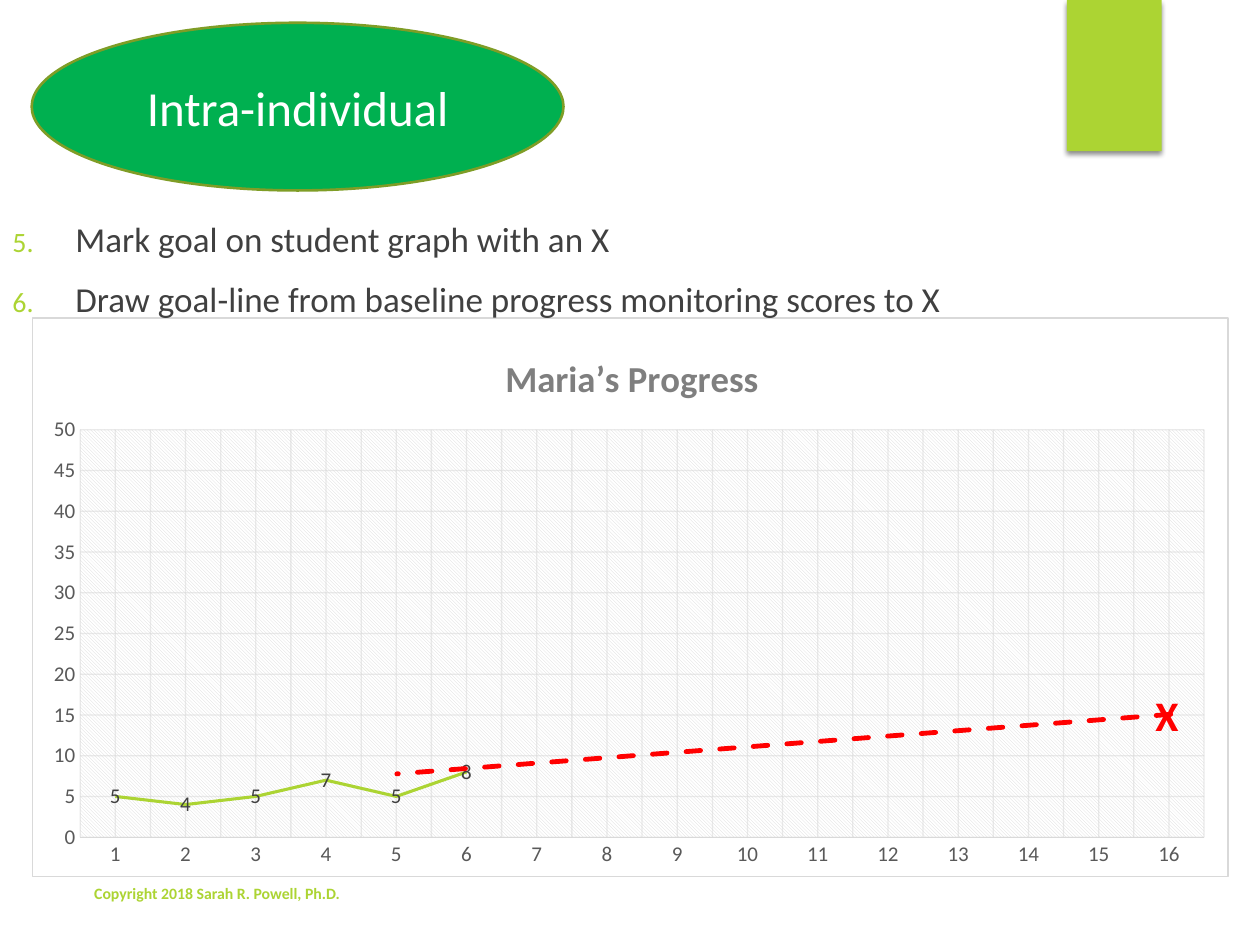
from copy import deepcopy
from dataclasses import dataclass

from lxml import etree
from pptx import Presentation
from pptx.chart.data import CategoryChartData
from pptx.dml.color import RGBColor
from pptx.enum.chart import XL_CHART_TYPE, XL_LABEL_POSITION, XL_MARKER_STYLE, XL_TICK_MARK
from pptx.enum.dml import MSO_LINE
from pptx.enum.shapes import MSO_CONNECTOR, MSO_SHAPE
from pptx.enum.text import MSO_ANCHOR, PP_ALIGN
from pptx.oxml import parse_xml
from pptx.oxml.ns import nsdecls, qn
from pptx.util import Cm, Pt

LINE_CHART = XL_CHART_TYPE.LINE
NO_MARKER = XL_MARKER_STYLE.NONE
NO_TICK = XL_TICK_MARK.NONE
LABEL_CENTER = XL_LABEL_POSITION.CENTER
STRAIGHT = MSO_CONNECTOR.STRAIGHT
RECTANGLE, OVAL = MSO_SHAPE.RECTANGLE, MSO_SHAPE.OVAL
TOP, MIDDLE, BOTTOM = MSO_ANCHOR.TOP, MSO_ANCHOR.MIDDLE, MSO_ANCHOR.BOTTOM
LEFT, CENTER = PP_ALIGN.LEFT, PP_ALIGN.CENTER
DASH = MSO_LINE.DASH

FONT = "Calibri"
COLORS = {
    "lime": "ACD433", "green": "00B050", "olive": "7F9D26", "white": "FFFFFF",
    "black": "000000", "text": "404040", "axis": "595959", "grid": "D9D9D9",
    "heading": "7F7F7F", "goal": "FF0000",
}


@dataclass(frozen=True)
class Area:
    left: float
    top: float
    width: float
    height: float

    def lengths(self) -> tuple:
        return Cm(self.left), Cm(self.top), Cm(self.width), Cm(self.height)


ACCENT = Area(21.51, 0, 1.91, 3.05)
TITLE = Area(0.64, 0.46, 10.72, 3.38)
CHART = Area(0.64, 6.4, 24.13, 11.28)
GOAL_MARK = Area(23.04, 13.77, 1.93, 1.27)
STEPS = Area(0, 4.27, 24.13, 11.35)
COPYRIGHT = Area(1.65, 17.68, 10.72, 0.64)

STEP_START = 5
STEP_TEXTS = [
    "Mark goal on student graph with an X",
    "Draw goal-line from baseline progress monitoring scores to X",
]
SCORES = [5, 4, 5, 7, 5, 8]
WEEKS = 16


def rgb(name: str) -> RGBColor:
    return RGBColor.from_string(COLORS[name])


def format_font(font, size: float, color: str, bold: bool = False) -> None:
    font.name, font.size, font.bold = FONT, Pt(size), bold
    font.color.rgb = rgb(color)


def write_text(para, text: str, *, size: float, color: str, bold: bool = False,
               align=LEFT) -> None:
    para.alignment = align
    span = para.add_run()
    span.text = text
    format_font(span.font, size, color, bold)


def add_text_box(page, area: Area, anchor=TOP):
    frame = page.shapes.add_textbox(*area.lengths()).text_frame
    frame.word_wrap = True
    frame.vertical_anchor = anchor
    return frame


def add_filled_shape(page, kind, area: Area, fill: str):
    shape = page.shapes.add_shape(kind, *area.lengths())
    shape.shadow.inherit = False
    shape.fill.solid()
    shape.fill.fore_color.rgb = rgb(fill)
    shape.line.fill.background()
    return shape


def add_accent(page) -> None:
    shape = add_filled_shape(page, RECTANGLE, ACCENT, "lime")
    shape._element.spPr.find(qn("a:effectLst")).append(parse_xml(
        f'<a:outerShdw {nsdecls("a")} blurRad="{Pt(3)}" dist="{Pt(2)}" dir="5400000" '
        f'rotWithShape="0"><a:srgbClr val="{COLORS["black"]}"><a:alpha val="45000"/>'
        '</a:srgbClr></a:outerShdw>'))


def add_title(page) -> None:
    oval = add_filled_shape(page, OVAL, TITLE, "green")
    oval.line.color.rgb = rgb("olive")
    oval.line.width = Pt(1.5)
    title = page.shapes.title
    title.left, title.top, title.width, title.height = TITLE.lengths()
    title.text_frame.vertical_anchor = MIDDLE
    write_text(title.text_frame.paragraphs[0], "Intra-individual",
               size=28, color="white", align=CENTER)
    oval._element.addnext(title._element)


def add_steps(page) -> None:
    frame = add_text_box(page, STEPS)
    for index, text in enumerate(STEP_TEXTS):
        para = frame.paragraphs[0] if index == 0 else frame.add_paragraph()
        properties = para._p.get_or_add_pPr()
        properties.set("marL", str(Cm(1.27)))
        properties.set("indent", str(-Cm(1.27)))
        color = etree.SubElement(properties, qn("a:buClr"))
        etree.SubElement(color, qn("a:srgbClr"), val=COLORS["lime"])
        etree.SubElement(properties, qn("a:buSzPct"), val="80000")
        etree.SubElement(properties, qn("a:buFont"), typeface=FONT)
        etree.SubElement(properties, qn("a:buAutoNum"), type="arabicPeriod",
                         startAt=str(STEP_START))
        para.space_before = Pt(10 if index else 0)
        write_text(para, text, size=20, color="text")


def set_layout(parent, before: str, inner: bool = False, **fractions: float) -> None:
    for old in parent.findall(qn("c:layout")):
        parent.remove(old)
    layout = etree.Element(qn("c:layout"))
    manual = etree.SubElement(layout, qn("c:manualLayout"))
    if inner:
        etree.SubElement(manual, qn("c:layoutTarget"), val="inner")
    for mode in ("xMode", "yMode"):
        etree.SubElement(manual, qn(f"c:{mode}"), val="edge")
    for name, value in fractions.items():
        etree.SubElement(manual, qn(f"c:{name}"), val=str(value))
    parent.find(qn(before)).addprevious(layout)


def format_axis(axis) -> None:
    axis.major_tick_mark = axis.minor_tick_mark = NO_TICK
    format_font(axis.tick_labels.font, 12, "axis")
    axis.has_major_gridlines = True
    line = axis.major_gridlines.format.line
    line.width = Pt(0.75)
    line.color.rgb = rgb("grid")
    color = axis._element.find(qn("c:majorGridlines")).find(f".//{qn('a:srgbClr')}")
    etree.SubElement(color, qn("a:alpha"), val="54000")


def add_minor_gridlines(axis) -> None:
    axis.has_minor_gridlines = True
    major = axis._element.find(qn("c:majorGridlines"))
    minor = axis._element.find(qn("c:minorGridlines"))
    minor.append(deepcopy(major.find(qn("c:spPr"))))


def fill_chart(chart) -> None:
    grid, white = COLORS["grid"], COLORS["white"]
    chart._chartSpace.find(qn("c:chart")).addnext(parse_xml(
        f'<c:spPr {nsdecls("c", "a")}><a:solidFill><a:srgbClr val="{white}"/></a:solidFill>'
        f'<a:ln w="{Pt(0.75)}"><a:solidFill><a:srgbClr val="{grid}"/></a:solidFill></a:ln>'
        '</c:spPr>'))
    chart._chartSpace.chart.plotArea.append(parse_xml(
        f'<c:spPr {nsdecls("c", "a")}><a:pattFill prst="ltDnDiag">'
        f'<a:fgClr><a:srgbClr val="{grid}"/></a:fgClr>'
        f'<a:bgClr><a:srgbClr val="{white}"/></a:bgClr></a:pattFill></c:spPr>'))


def add_progress_chart(page) -> None:
    data = CategoryChartData()
    data.categories = [str(week) for week in range(1, WEEKS + 1)]
    data.add_series("Series 1", SCORES + [None] * (WEEKS - len(SCORES)))
    chart = page.shapes.add_chart(LINE_CHART, *CHART.lengths(), data).chart
    format_font(chart.font, 10, "black")
    chart.has_legend = False
    chart.has_title = True
    write_text(chart.chart_title.text_frame.paragraphs[0], "Maria’s Progress",
               size=21, color="heading", bold=True, align=CENTER)

    weeks, scores = chart.category_axis, chart.value_axis
    for axis in (weeks, scores):
        format_axis(axis)
    add_minor_gridlines(weeks)
    weeks.format.line.color.rgb = rgb("grid")
    weeks.format.line.width = Pt(0.75)
    scores.format.line.fill.background()
    scores.minimum_scale, scores.maximum_scale, scores.major_unit = 0, 50, 5

    chart.plots[0].vary_by_categories = False
    series = chart.plots[0].series[0]
    series.smooth = False
    series.marker.style = NO_MARKER
    series.format.line.color.rgb = rgb("lime")
    series.format.line.width = Pt(1.75)
    labels = series.data_labels
    labels.show_value = True
    labels.position = LABEL_CENTER
    format_font(labels.font, 12, "text")

    fill_chart(chart)
    set_layout(chart.chart_title._element, "c:overlay", x=0.39, y=0.05)
    set_layout(chart._chartSpace.chart.plotArea, "c:lineChart", inner=True,
               x=0.04, y=0.2, w=0.94, h=0.73)


def add_goal(page) -> None:
    mark = add_text_box(page, GOAL_MARK)
    write_text(mark.paragraphs[0], "X", size=24, color="goal", bold=True)
    line = page.shapes.add_connector(STRAIGHT, Cm(23.6), Cm(14.4), Cm(8), Cm(15.6))
    line.line.color.rgb = rgb("goal")
    line.line.width = Pt(2.75)
    line.line.dash_style = DASH
    properties = line._element.spPr
    properties.find(qn("a:ln")).set("cap", "rnd")
    etree.SubElement(properties, qn("a:effectLst"))


def main() -> None:
    deck = Presentation()
    deck.slide_width, deck.slide_height = Cm(25.4), Cm(19.05)
    page = deck.slides.add_slide(deck.slide_layouts[5])
    add_accent(page)
    add_title(page)
    add_progress_chart(page)
    add_goal(page)
    add_steps(page)
    notice = add_text_box(page, COPYRIGHT, BOTTOM)
    write_text(notice.paragraphs[0], "Copyright 2018 Sarah R. Powell, Ph.D.",
               size=9, color="lime", bold=True)
    deck.save("out.pptx")


if __name__ == "__main__":
    main()
